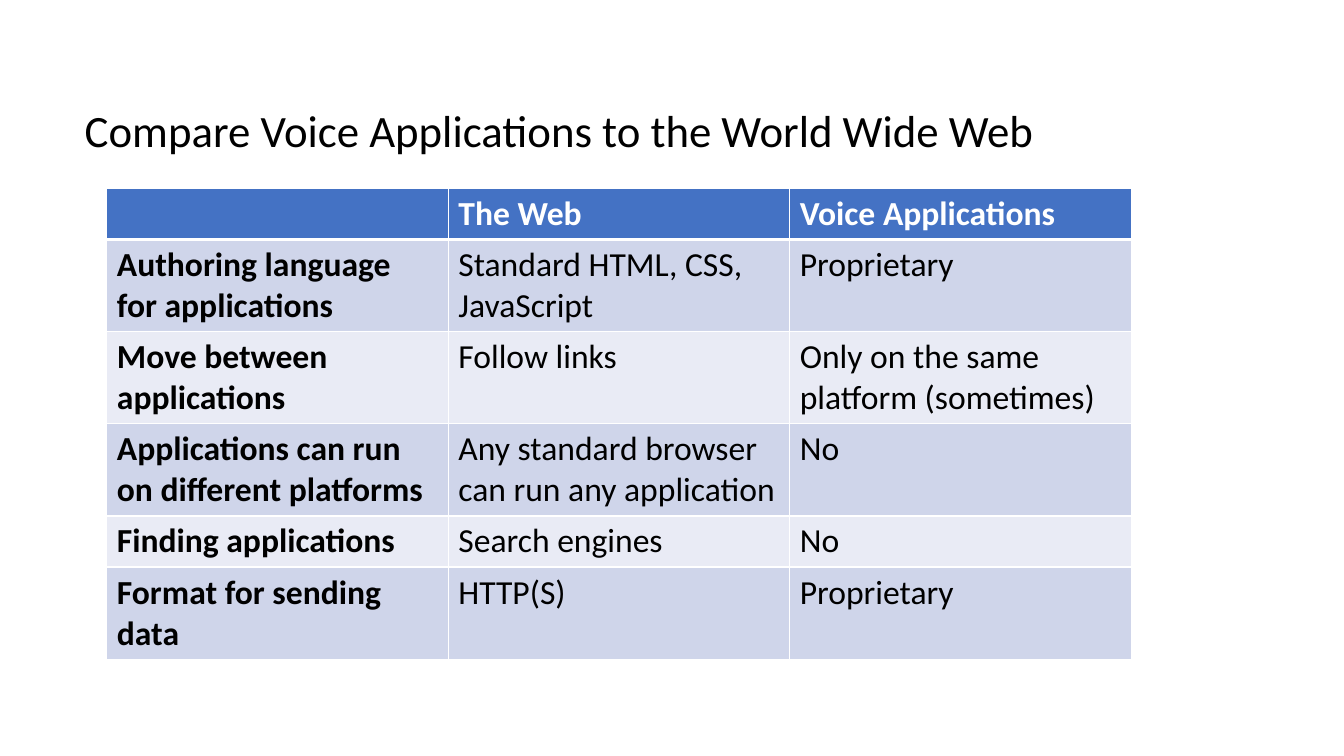
import pptx
import pptx.dml.color
import pptx.enum.text
import pptx.oxml
import pptx.oxml.ns
import pptx.util

Inches = pptx.util.Inches
Pt = pptx.util.Pt

COLORS = {"head": "4472C4", "odd": "CFD5EA", "even": "E9EBF5",
          "white": "FFFFFF", "black": "000000"}

ROWS = [
    ("", "The Web", "Voice Applications"),
    ("Authoring language for applications", "Standard HTML, CSS, JavaScript", "Proprietary"),
    ("Move between applications", "Follow links", "Only on the same platform (sometimes)"),
    ("Applications can run on different platforms",
     "Any standard browser can run any application", "No"),
    ("Finding applications", "Search engines", "No"),
    ("Format for sending data", "HTTP(S)", "Proprietary"),
]
ONE, TWO = 0.5, 0.9  # heights of rows with one and two lines
HEIGHTS = [ONE, TWO, TWO, TWO, ONE, TWO]


def style(par, size, color, bold):
    par.font.color.rgb = pptx.dml.color.RGBColor.from_string(COLORS[color])
    for key, value in {"name": "Calibri", "size": Pt(size), "bold": bold}.items():
        setattr(par.font, key, value)


def border(cell, side, width):
    line = pptx.oxml.parse_xml(
        f'<a:{side} {pptx.oxml.ns.nsdecls("a")} w="{Pt(width)}"><a:solidFill>'
        f'<a:srgbClr val="{COLORS["white"]}"/></a:solidFill></a:{side}>')
    cell._tc.get_or_add_tcPr().append(line)


# Slide
deck = pptx.Presentation()
deck.slide_width, deck.slide_height = Inches(13.33), Inches(7.5)
slide = deck.slides.add_slide(deck.slide_layouts[5])

# Title
title = slide.shapes.title
place = {"left": 0.74, "top": 0.97, "width": 9.86, "height": 0.64}
for key, value in place.items():
    setattr(title, key, Inches(value))
frame = title.text_frame
frame.text = "Compare Voice Applications to the World Wide Web"
form = {"word_wrap": True, "auto_size": pptx.enum.text.MSO_AUTO_SIZE.NONE,
        "vertical_anchor": pptx.enum.text.MSO_ANCHOR.MIDDLE}
for key, value in form.items():
    setattr(frame, key, value)
frame.paragraphs[0].alignment = pptx.enum.text.PP_ALIGN.LEFT
style(frame.paragraphs[0], 32, "black", False)

# Table
table = slide.shapes.add_table(len(ROWS), 3, Inches(1.06), Inches(1.87),
                               Inches(10.16), Inches(sum(HEIGHTS))).table
for r, texts in enumerate(ROWS):
    table.rows[r].height = Inches(HEIGHTS[r])
    fill = "head" if r == 0 else "odd" if r % 2 else "even"
    for c, text in enumerate(texts):
        cell = table.cell(r, c)
        cell.text = text
        style(cell.text_frame.paragraphs[0], 24,
              "black" if r else "white", r == 0 or c == 0)
        widths = {"lnL": 1, "lnR": 1, "lnT": 3 if r == 1 else 1, "lnB": 1 if r else 3}
        for side, width in widths.items():
            border(cell, side, width)
        cell.fill.solid()
        cell.fill.fore_color.rgb = pptx.dml.color.RGBColor.from_string(COLORS[fill])

deck.save("out.pptx")
